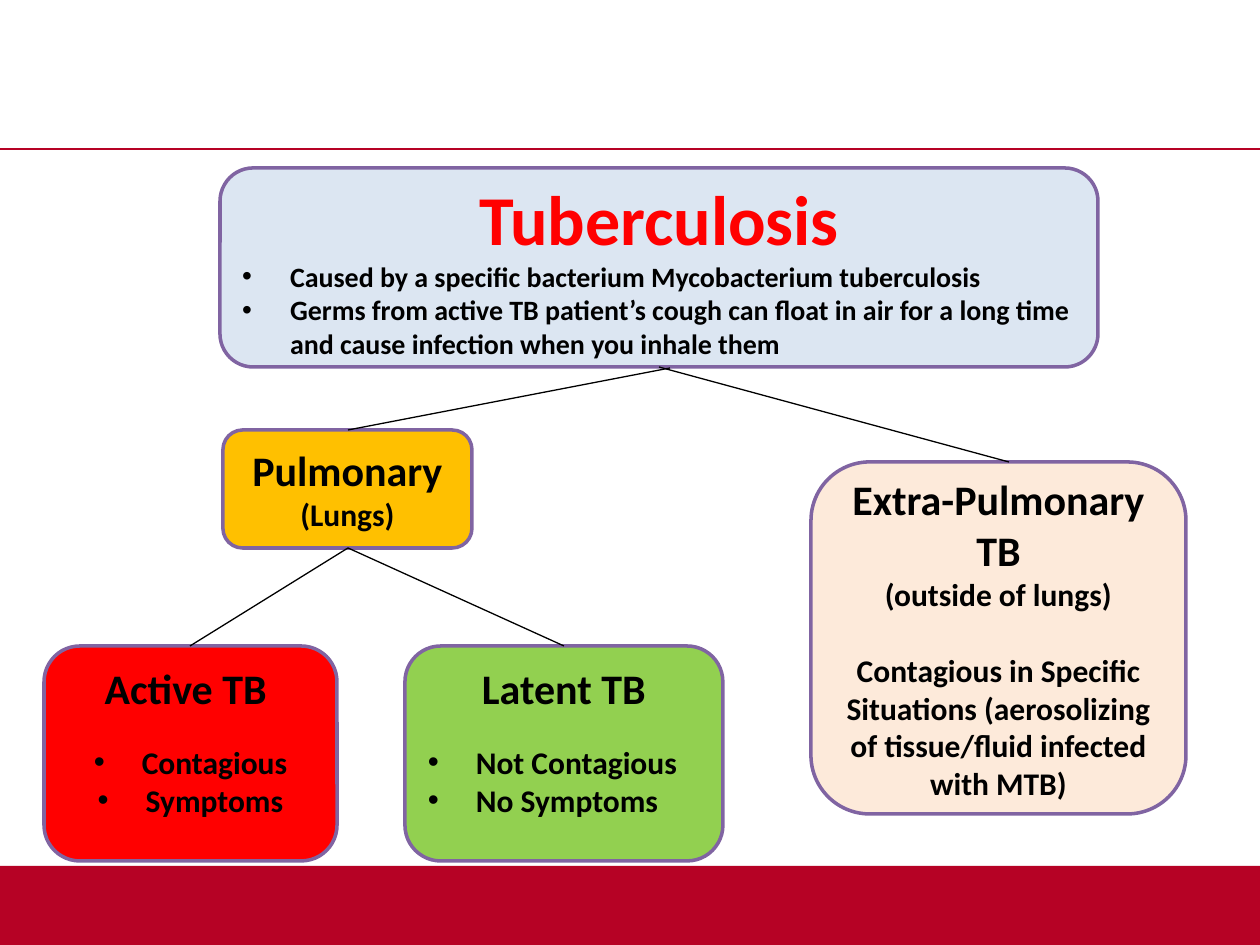
from dataclasses import dataclass

from lxml import etree
from pptx import Presentation
from pptx.dml.color import RGBColor
from pptx.enum.shapes import MSO_CONNECTOR, MSO_SHAPE
from pptx.enum.text import MSO_ANCHOR, PP_ALIGN
from pptx.oxml.ns import qn
from pptx.util import Emu, Pt

RECT, ROUND = MSO_SHAPE.RECTANGLE, MSO_SHAPE.ROUNDED_RECTANGLE
STRAIGHT = MSO_CONNECTOR.STRAIGHT
TOP, MIDDLE = MSO_ANCHOR.TOP, MSO_ANCHOR.MIDDLE
LEFT, CENTER = PP_ALIGN.LEFT, PP_ALIGN.CENTER
SCALE = 914400 / 126


@dataclass(frozen=True)
class Theme:
    font: str = "Calibri"
    brand: str = "B60225"
    border: str = "8064A2"
    ink: str = "000000"
    alert: str = "FF0000"
    sky: str = "DCE6F2"
    peach: str = "FDEADA"
    gold: str = "FFC000"
    green: str = "92D050"
    hero: int = 40
    head: int = 24
    body: int = 18
    small: int = 16


@dataclass(frozen=True)
class Para:
    text: str
    size: int
    color: str = Theme.ink
    align: int = CENTER
    bullet: bool = False
    gap: int = 0


THEME = Theme()


def px(n):
    return Emu(round(n * SCALE))


def rgb(code):
    return RGBColor.from_string(code)


def add_bullet(para):
    props = para._p.get_or_add_pPr()
    props.set("marL", str(px(48)))
    props.set("indent", str(-px(48)))
    etree.SubElement(props, qn("a:buFont")).set("typeface", "Arial")
    etree.SubElement(props, qn("a:buChar")).set("char", "•")


def add_shape(slide, kind, at, fill):
    shape = slide.shapes.add_shape(kind, *map(px, at))
    shape.shadow.inherit = False
    shape.fill.solid()
    shape.fill.fore_color.rgb = rgb(fill)
    return shape


def add_band(slide):
    band = add_shape(slide, RECT, (0, 866, 1260, 79), THEME.brand)
    band.line.fill.background()


def add_box(slide, at, fill, paras, anchor=MIDDLE):
    box = add_shape(slide, ROUND, at, fill)
    box.line.color.rgb = rgb(THEME.border)
    box.line.width = Pt(2)
    frame = box.text_frame
    frame.word_wrap = True
    frame.vertical_anchor = anchor
    frame.text = "\n".join(item.text for item in paras)
    for para, item in zip(frame.paragraphs, paras):
        para.alignment = item.align
        if item.gap:
            para.space_before = Pt(item.gap)
        if item.bullet:
            add_bullet(para)
        for run in para.runs:
            font = run.font
            font.name, font.size, font.bold = THEME.font, Pt(item.size), True
            font.color.rgb = rgb(item.color)


def add_line(slide, start, end, color=THEME.ink, width=0.75):
    line = slide.shapes.add_connector(STRAIGHT, *map(px, start + end))
    line.line.color.rgb = rgb(color)
    line.line.width = Pt(width)
    etree.SubElement(line._element.spPr, qn("a:effectLst"))


def add_type(slide, at, fill, head, points, align):
    paras = [Para(head, THEME.head)]
    for i, point in enumerate(points):
        paras.append(Para(point, THEME.body, align=align, bullet=True,
                          gap=0 if i else 17))
    add_box(slide, at, fill, paras, TOP)


def main():
    deck = Presentation()
    deck.slide_width, deck.slide_height = px(1260), px(945)
    slide = deck.slides.add_slide(deck.slide_layouts[6])

    add_band(slide)
    add_line(slide, (0, 149), (1260, 149), THEME.brand, 1)

    facts = (
        "Caused by a specific bacterium Mycobacterium tuberculosis",
        "Germs from active TB patient’s cough can float in air for a long time "
        "and cause infection when you inhale them",
    )
    add_box(slide, (220, 168, 878, 199), THEME.sky, [
        Para("Tuberculosis", THEME.hero, THEME.alert),
        *(Para(fact, THEME.small, align=LEFT, bullet=True) for fact in facts),
    ])
    add_box(slide, (811, 462, 375, 352), THEME.peach, [
        Para("Extra-Pulmonary TB", THEME.head),
        Para("(outside of lungs)", THEME.body),
        Para("Contagious in Specific Situations (aerosolizing of "
             "tissue/fluid infected with MTB)", THEME.body, gap=22),
    ])
    add_box(slide, (223, 430, 249, 118), THEME.gold, [
        Para("Pulmonary", THEME.head),
        Para("(Lungs)", THEME.body),
    ])
    add_type(slide, (44, 646, 293, 215), THEME.alert, "Active TB ",
             ("Contagious", "Symptoms"), CENTER)
    add_type(slide, (405, 646, 318, 215), THEME.green, "Latent TB",
             ("Not Contagious", "No Symptoms"), LEFT)

    add_line(slide, (670, 368), (348, 430))
    add_line(slide, (659, 367), (1009, 462))
    for end in (190, 564):
        add_line(slide, (348, 548), (end, 646))

    deck.save("out.pptx")


if __name__ == "__main__":
    main()
